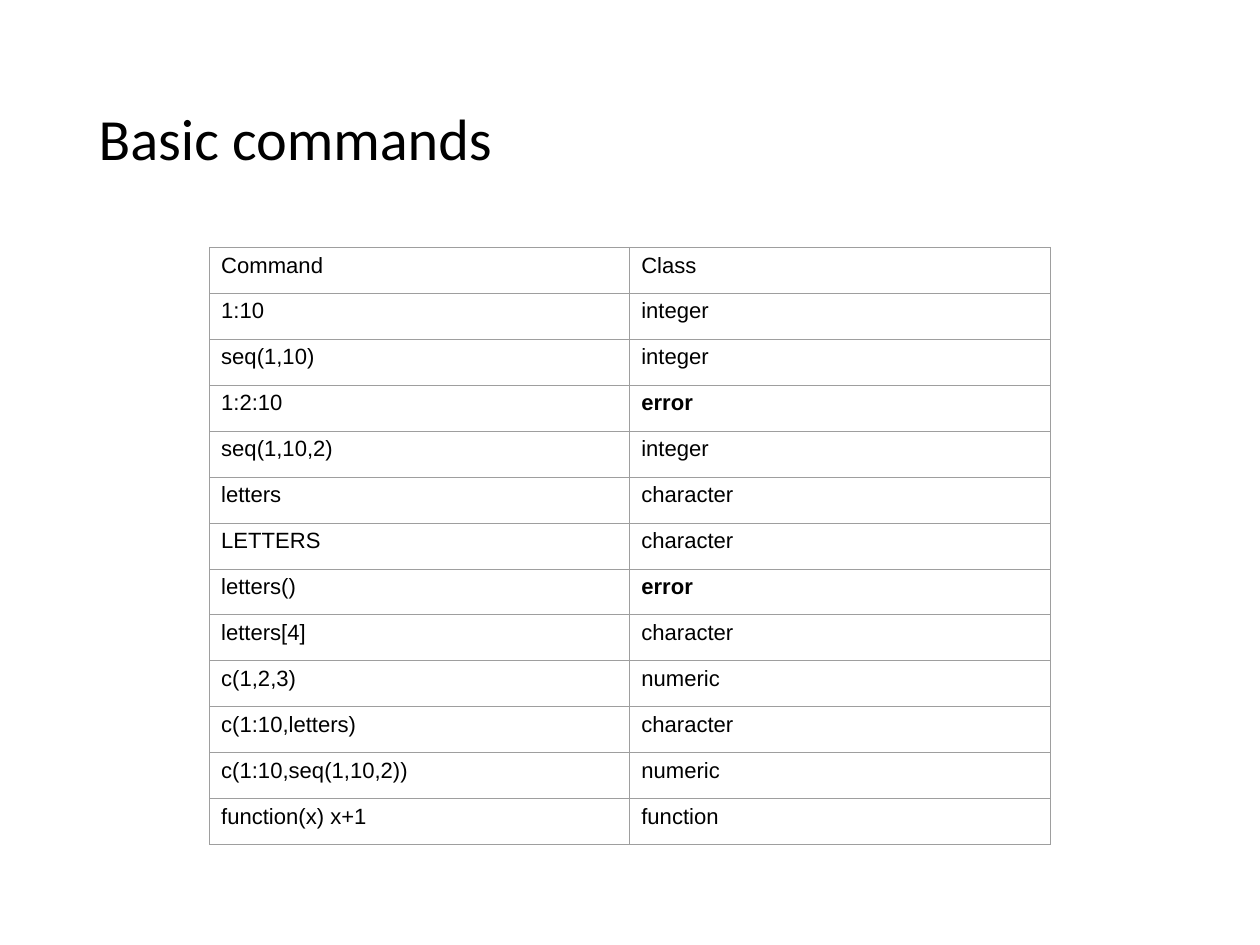
from lxml.etree import SubElement
from pptx import Presentation
from pptx.dml.color import RGBColor
from pptx.enum.text import MSO_ANCHOR as Anchor, PP_ALIGN as Align
from pptx.oxml.ns import qn
from pptx.util import Inches, Pt

TITLE = "Basic commands"
COMMANDS = [
    ("Command", "Class"),
    ("1:10", "integer"),
    ("seq(1,10)", "integer"),
    ("1:2:10", "error"),
    ("seq(1,10,2)", "integer"),
    ("letters", "character"),
    ("LETTERS", "character"),
    ("letters()", "error"),
    ("letters[4]", "character"),
    ("c(1,2,3)", "numeric"),
    ("c(1:10,letters)", "character"),
    ("c(1:10,seq(1,10,2))", "numeric"),
    ("function(x) x+1", "function"),
]
COLORS = {"text": "000000", "border": "9E9E9E"}
TABLE_LEFT, TABLE_TOP, TABLE_WIDTH, TABLE_HEIGHT = 1.85, 2.18, 7.41, 5.27


def write(frame, text, font="Arial", size=14, bold=False, spacing=1.0):
    paragraph = frame.paragraphs[0]
    paragraph.alignment = Align.LEFT
    paragraph.line_spacing = spacing
    run = paragraph.add_run()
    run.text = text
    run.font.name = font
    run.font.size = Pt(size)
    run.font.bold = bold
    run.font.color.rgb = RGBColor.from_string(COLORS["text"])


def add_borders(cell):
    properties = cell._tc.get_or_add_tcPr()
    for position, side in enumerate(("lnL", "lnR", "lnT", "lnB")):
        line = properties.makeelement(qn(f"a:{side}"), {"w": str(Pt(0.75))})
        fill = SubElement(line, qn("a:solidFill"))
        SubElement(fill, qn("a:srgbClr"), val=COLORS["border"])
        properties.insert(position, line)


deck = Presentation()
deck.slide_width, deck.slide_height = Inches(11.11), Inches(8.33)
slide = deck.slides.add_slide(deck.slide_layouts[5])

# Title
title = slide.shapes.title
title.left, title.top = Inches(0.76), Inches(0.44)
title.width, title.height = Inches(9.58), Inches(1.61)
title_frame = title.text_frame
title_frame.vertical_anchor = Anchor.MIDDLE
title_frame.margin_left = title_frame.margin_right = Inches(0.11)
title_frame.margin_top = title_frame.margin_bottom = Inches(0.11)
write(title_frame, TITLE, font="Calibri", size=37, spacing=0.9)

# Command table
command_table = slide.shapes.add_table(
    len(COMMANDS), len(COMMANDS[0]), Inches(TABLE_LEFT), Inches(TABLE_TOP),
    Inches(TABLE_WIDTH), Inches(TABLE_HEIGHT)).table
command_table.first_row = False
command_table.horz_banding = False
for row, entries in enumerate(COMMANDS):
    for column, entry in enumerate(entries):
        cell = command_table.cell(row, column)
        cell.fill.background()
        cell.vertical_anchor = Anchor.TOP
        cell.margin_left = cell.margin_right = Inches(0.1)
        cell.margin_top = cell.margin_bottom = Inches(0.05)
        write(cell.text_frame, entry, bold=entry == "error")
        add_borders(cell)

deck.save("out.pptx")
